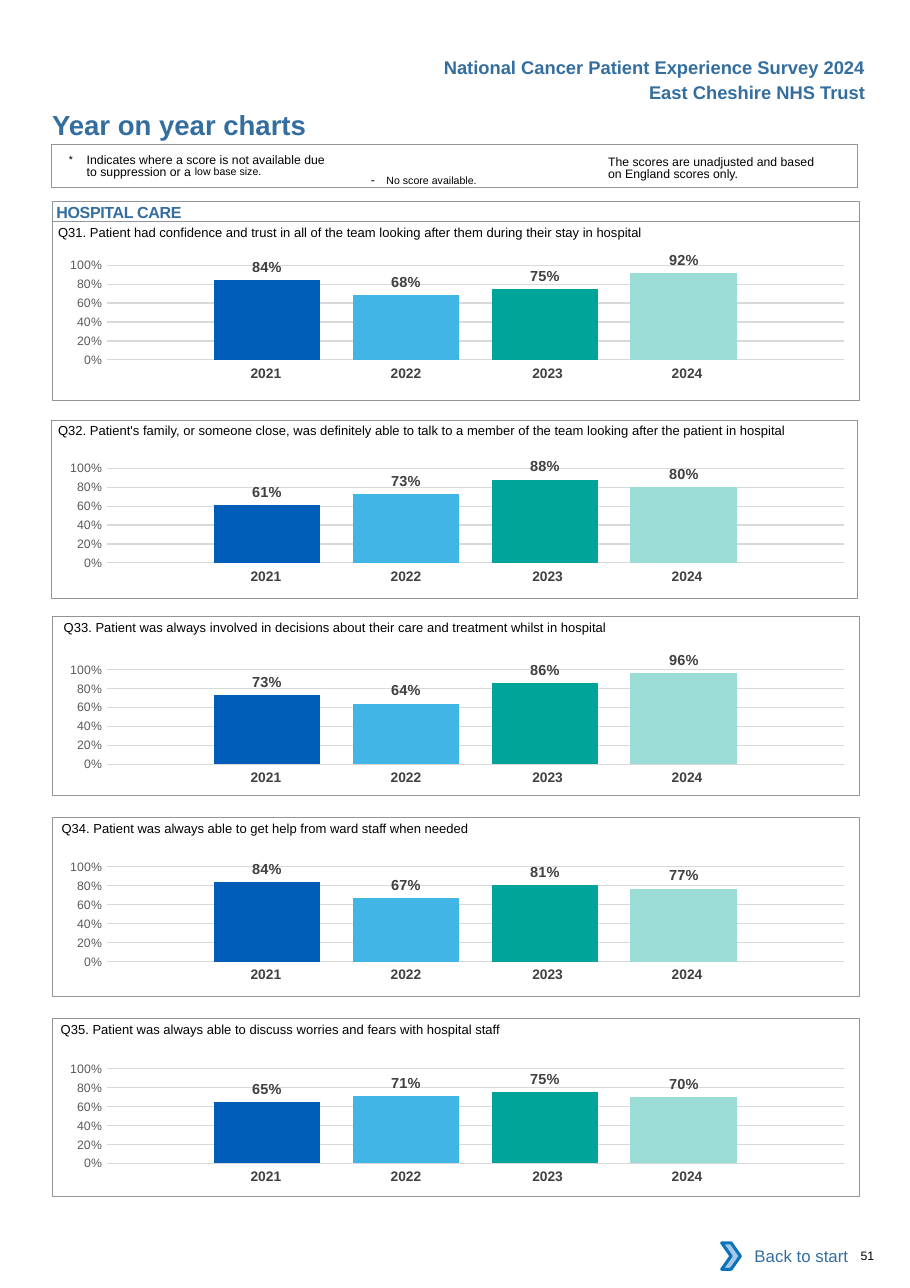
from collections import namedtuple

from lxml import etree
from pptx import Presentation
from pptx import util as u
from pptx.chart import data as chart_data
from pptx.dml import color
from pptx.enum import chart as chart_enum, shapes, text
from pptx.oxml import ns

COLORS = {
    "heading": "336E9F", "ink": "000000", "year": "414042", "value": "404040",
    "axis": "595959", "grid": "D9D9D9", "border": "939598", "white": "FFFFFF",
    "chevron": "A8C7E9", "chevron line": "0A74BB",
}
YEARS = {"2021": "005EB8", "2022": "41B6E6", "2023": "00A499", "2024": "9CDCD7"}
YEAR_WIDTHS = (3.23, 3.23, 3.4, 3.23)
YEAR_INSETS = (0, 0, 0.1, 0.3)
PLOT = {"x": 0.079, "y": 0.145, "w": 0.915, "h": 0.666}
NO_STYLE = "{2D5ABB26-0587-4C30-8999-92F81FD0307C}"

Box = namedtuple("Box", "left top width height")
Panel = namedtuple("Panel", "left top indent chart_drop question scores")
PANELS = (
    Panel(1.22, 5.11, 0.12, 0.53,
          "Q31. Patient had confidence and trust in all of the team looking after them "
          "during their stay in hospital", (0.84, 0.68, 0.75, 0.92)),
    Panel(1.19, 9.68, 0.15, 0.64,
          "Q32. Patient's family, or someone close, was definitely able to talk to a member "
          "of the team looking after the patient in hospital", (0.61, 0.73, 0.88, 0.8)),
    Panel(1.22, 14.22, 0.25, 0.74,
          "Q33. Patient was always involved in decisions about their care and treatment "
          "whilst in hospital", (0.73, 0.64, 0.86, 0.96)),
    Panel(1.22, 18.85, 0.2, 0.66,
          "Q34. Patient was always able to get help from ward staff when needed",
          (0.84, 0.67, 0.81, 0.77)),
    Panel(1.22, 23.47, 0.18, 0.69,
          "Q35. Patient was always able to discuss worries and fears with hospital staff",
          (0.65, 0.71, 0.75, 0.7)),
)


def rgb(name):
    return color.RGBColor.from_string(COLORS.get(name, name))


def place(box):
    return [u.Cm(length) for length in box]


def style(font, size, ink="ink", bold=False):
    font.name = "Arial"
    font.size = u.Pt(size)
    font.bold = bold
    font.color.rgb = rgb(ink)


def write(frame, content, size, ink="ink", bold=False, align="LEFT", anchor="TOP"):
    frame.margin_left = frame.margin_top = frame.margin_right = frame.margin_bottom = 0
    frame.word_wrap = True
    frame.vertical_anchor = getattr(text.MSO_ANCHOR, anchor)
    frame.text = content
    para = frame.paragraphs[0]
    para.alignment = getattr(text.PP_ALIGN, align)
    for span in para.runs:
        style(span.font, size, ink, bold)
    return para


def add_text(page, box, content, size, **look):
    return write(page.shapes.add_textbox(*place(box)).text_frame, content, size, **look)


def add_raised(para, content, rise):
    span = para.add_run()
    span.text = content
    style(span.font, 12)
    span.font._element.set("baseline", str(rise * 1000))


def add_outline(page, box, preset="RECTANGLE", fill=None, line=None, weight=0.5):
    shape = page.shapes.add_shape(getattr(shapes.MSO_SHAPE, preset), *place(box))
    shape.shadow.inherit = False
    if fill:
        shape.fill.solid()
        shape.fill.fore_color.rgb = rgb(fill)
    else:
        shape.fill.background()
    if line:
        shape.line.color.rgb = rgb(line)
        shape.line.width = u.Pt(weight)
    else:
        shape.line.fill.background()
    return shape


def add_header(page, box):
    titles = ("National Cancer Patient Experience Survey 2024", "East Cheshire NHS Trust")
    for row, title in enumerate(titles):
        line = Box(box.left + 6, box.top + row * 0.57, box.width - 6, 0.6)
        add_text(page, line, title, 12, ink="heading", bold=True, align="RIGHT")
    heading = Box(box.left, box.top + 1.18, 11.43, 0.76)
    add_text(page, heading, "Year on year charts", 18, ink="heading", bold=True)


def add_notes(page, box):
    top = box.top + 0.26
    para = add_text(page, Box(box.left + 0.4, top, 6.07, 0.7), "", 8)
    para.line_spacing = u.Pt(8.1)
    properties = para._p.get_or_add_pPr()
    properties.set("marL", str(u.Cm(0.41)))
    properties.set("indent", str(u.Cm(-0.41)))
    add_raised(para, "*\t", 3)
    span = para.add_run()
    span.text = "Indicates where a score is not available due to suppression or a "
    style(span.font, 8)
    add_raised(para, "low base size.", 7)

    para = add_text(page, Box(box.left + 7.36, top + 0.25, 4.4, 0.5), "-\t", 8)
    tabs = etree.SubElement(para._p.get_or_add_pPr(), ns.qn("a:tabLst"))
    etree.SubElement(tabs, ns.qn("a:tab"), pos=str(u.Cm(0.36)), algn="l")
    add_raised(para, "No score available.", 3)

    para = add_text(page, Box(box.left + 12.83, top + 0.02, 4.9, 0.6),
                    "The scores are unadjusted and based on England scores only.", 8)
    para.line_spacing = u.Pt(8.1)
    add_outline(page, box, line="border", weight=0.75)


def add_section(page, box):
    bar = add_outline(page, box, line="border")
    write(bar.text_frame, "HOSPITAL CARE", 10.5, ink="heading", bold=True, anchor="MIDDLE")
    bar.text_frame.margin_left = u.Cm(0.08)
    bar.text_frame.paragraphs[0].runs[0].font._element.set("spc", "-20")


def add_scores(page, box, scores):
    source = chart_data.CategoryChartData(number_format="0%")
    source.categories = ["1"]
    for number, score in enumerate(scores, 1):
        source.add_series(f"Series {number}", [score])
    chart = page.shapes.add_chart(
        chart_enum.XL_CHART_TYPE.COLUMN_CLUSTERED, *place(box), source).chart
    chart.has_title = chart.has_legend = False
    chart.font.name = "Calibri"
    chart.font.size = u.Pt(10)
    chart.font.color.rgb = rgb("ink")
    chart.category_axis.visible = False

    axis = chart.value_axis
    axis.minimum_scale, axis.maximum_scale, axis.major_unit = 0, 1, 0.2
    axis.major_tick_mark = chart_enum.XL_TICK_MARK.NONE
    axis.format.line.fill.background()
    axis.major_gridlines.format.line.color.rgb = rgb("grid")
    axis.major_gridlines.format.line.width = u.Pt(0.75)
    axis.tick_labels.number_format = "0%"
    axis.tick_labels.number_format_is_linked = False
    style(axis.tick_labels.font, 8, "axis")

    plot = chart.plots[0]
    plot.vary_by_categories = False
    plot.gap_width, plot.overlap = 200, -30
    for series, fill in zip(plot.series, YEARS.values()):
        series.format.fill.solid()
        series.format.fill.fore_color.rgb = rgb(fill)
        labels = series.data_labels
        labels.show_value = True
        labels.position = chart_enum.XL_LABEL_POSITION.OUTSIDE_END
        labels.number_format = "0%"
        labels.number_format_is_linked = False
        style(labels.font, 9.5, "value", True)

    area = chart._chartSpace.find(".//" + ns.qn("c:plotArea"))
    for layout in area.findall(ns.qn("c:layout")):
        area.remove(layout)
    layout = etree.Element(ns.qn("c:layout"))
    manual = etree.SubElement(layout, ns.qn("c:manualLayout"))
    settings = {"layoutTarget": "inner", "xMode": "edge", "yMode": "edge", **PLOT}
    for name, setting in settings.items():
        etree.SubElement(manual, ns.qn("c:" + name), val=str(setting))
    area.insert(0, layout)


def add_years(page, box):
    table = page.shapes.add_table(1, len(YEARS), *place(box)).table
    table.first_row = table.horz_banding = False
    table._tbl.tblPr.find(ns.qn("a:tableStyleId")).text = NO_STYLE
    for column, year in enumerate(YEARS):
        table.columns[column].width = u.Cm(YEAR_WIDTHS[column])
        cell = table.cell(0, column)
        cell.fill.background()
        cell.margin_left = u.Cm(0.25)
        cell.margin_right = u.Cm(YEAR_INSETS[column])
        cell.margin_top = cell.margin_bottom = u.Cm(0.12)
        cell.text_frame.text = year
        para = cell.text_frame.paragraphs[0]
        para.alignment = text.PP_ALIGN.CENTER
        style(para.runs[0].font, 9, "year", True)


def add_panel(page, box, panel):
    chart_top = box.top + panel.chart_drop
    add_scores(page, Box(0.99, chart_top, 18.59, 3.28), panel.scores)
    add_years(page, Box(4.39, chart_top + 2.67, sum(YEAR_WIDTHS), 0.69))
    add_outline(page, box, line="border")
    question = Box(box.left + panel.indent, box.top, box.width - panel.indent, 0.5)
    add_text(page, question, panel.question, 8.5, anchor="MIDDLE")


def add_footer(page, box):
    button = add_outline(page, Box(box.left + 0.17, box.top, 3, box.height), fill="white")
    write(button.text_frame, "Back to start", 11, ink="heading", align="RIGHT", anchor="MIDDLE")
    button.text_frame.margin_right = u.Cm(0.25)
    add_outline(page, Box(box.left, box.top + 0.23, 0.43, 0.61), "CHEVRON",
                "chevron", "chevron line", 2)
    add_text(page, Box(box.left + 3.2, box.top, 1, box.height), "51", 8, anchor="MIDDLE")


def main():
    deck = Presentation()
    deck.slide_width, deck.slide_height = u.Cm(20.98), u.Cm(29.69)
    page = deck.slides.add_slide(deck.slide_layouts[6])
    add_header(page, Box(1.2, 1.3, 18.75, 2))
    add_notes(page, Box(1.19, 3.33, 18.59, 0.99))
    add_section(page, Box(1.22, 4.65, 18.59, 0.46))
    for panel in PANELS:
        add_panel(page, Box(panel.left, panel.top, 18.59, 4.11), panel)
    add_footer(page, Box(16.64, 28.42, 4.2, 1.07))
    deck.save("out.pptx")


if __name__ == "__main__":
    main()
